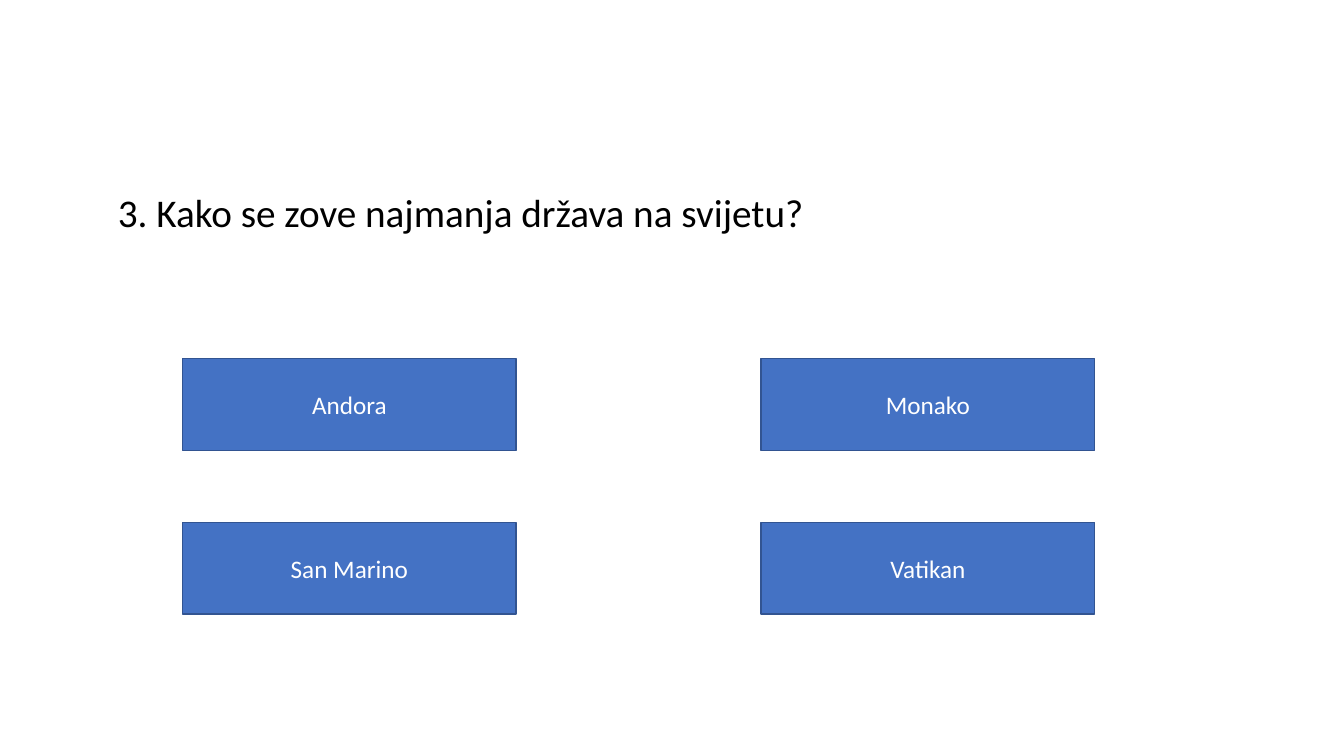
from dataclasses import dataclass

from pptx import Presentation
from pptx import util as u
from pptx.dml.color import RGBColor
from pptx.enum import shapes, text

LEFT, TOP = 4.6, 9.04
STEP_X, STEP_Y = 14.58, 4.12
WIDTH, HEIGHT = 8.41, 2.31


@dataclass
class Answer:
    label: str
    col: int
    row: int


ANSWERS = [
    Answer("Andora", 0, 0),
    Answer("Monako", 1, 0),
    Answer("San Marino", 0, 1),
    Answer("Vatikan", 1, 1),
]


def color(code: str) -> RGBColor:
    return RGBColor.from_string(code)


def write(frame, words: str, size: int, code: str, align) -> None:
    frame.text = words
    frame.word_wrap = True
    line = frame.paragraphs[0]
    line.alignment = align
    font = line.runs[0].font
    font.name = "Calibri"
    font.size = u.Pt(size)
    font.color.rgb = color(code)


def draw(slide, item: Answer) -> None:
    box = slide.shapes.add_shape(
        shapes.MSO_SHAPE.RECTANGLE,
        u.Cm(LEFT + item.col * STEP_X), u.Cm(TOP + item.row * STEP_Y),
        u.Cm(WIDTH), u.Cm(HEIGHT))
    box.shadow.inherit = False
    box.fill.solid()
    box.fill.fore_color.rgb = color("4472C4")
    box.line.color.rgb = color("325491")
    box.line.width = u.Pt(1)
    box.text_frame.vertical_anchor = text.MSO_ANCHOR.MIDDLE
    write(box.text_frame, item.label, 18, "FFFFFF", text.PP_ALIGN.CENTER)


def main() -> None:
    deck = Presentation()
    deck.slide_width, deck.slide_height = u.Cm(33.87), u.Cm(19.05)
    slide = deck.slides.add_slide(deck.slide_layouts[6])

    # Question
    query = slide.shapes.add_textbox(
        u.Cm(2.72), u.Cm(4.62), u.Cm(31.65), u.Cm(1.45))
    write(query.text_frame, "3. Kako se zove najmanja država na svijetu?",
          28, "000000", text.PP_ALIGN.LEFT)
    query.text_frame.auto_size = text.MSO_AUTO_SIZE.SHAPE_TO_FIT_TEXT

    # Answer grid
    for item in ANSWERS:
        draw(slide, item)

    deck.save("out.pptx")


if __name__ == "__main__":
    main()
